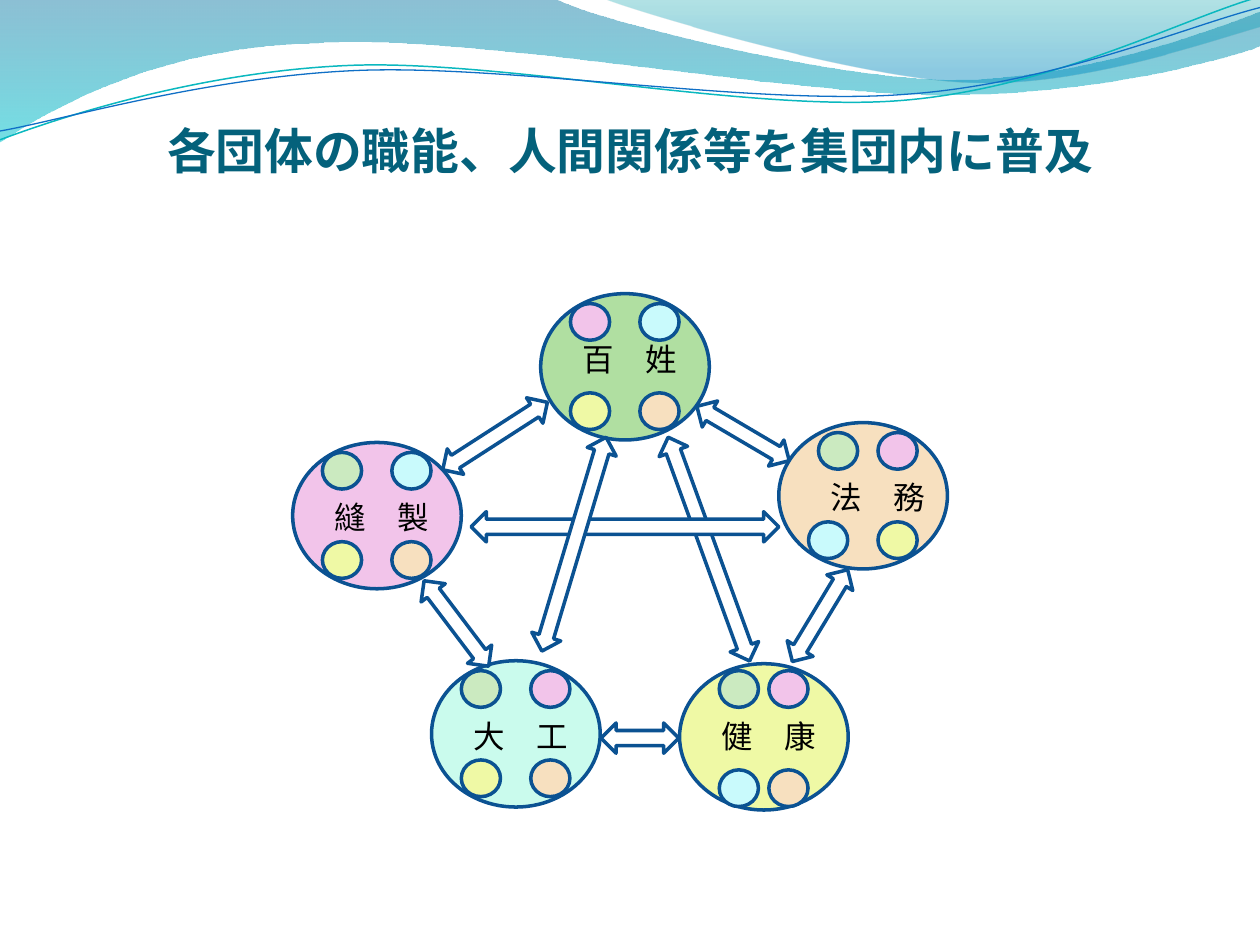
from lxml import etree
from pptx import Presentation
from pptx.dml.color import RGBColor
from pptx.enum import shapes, text
from pptx.oxml.ns import qn
from pptx.util import Cm, Pt

INK = "0B5292"
GREEN, PINK, CYAN, YELLOW, PEACH = "CBEAC0", "F2C4EA", "C9FAFC", "EFF9A5", "F7E0BF"
DOT_W, DOT_H = 0.79, 0.74
ARROW_H = 0.61

# Waves: a start, then cubic segments (three points) or straight ones (one
# point), in tenths of the slide width.
BACK = [(0, 0), [(4.4, -0.01)], [(4.76, 0.17), (6.64, 0.63), (7.58, 0.63)],
        [(8.53, 0.63), (9.58, 0.26), (10, 0.09)], [(10.01, 0.36)],
        [(9.83, 0.44), (8.7, 0.76), (7.46, 0.75)],
        [(6.22, 0.75), (3.82, 0.28), (2.57, 0.34)],
        [(1.29, 0.36), (0.46, 0.83), (-0.01, 1.13)]]
FRONT = [(4.79, -0.01), [(5.09, 0.11), (6.82, 0.62), (7.69, 0.65)],
         [(8.56, 0.69), (9.61, 0.32), (10, 0.21)], [(10, 0)]]
TEAL = [(0, 1.11), [(0.48, 0.93), (1.58, 0.57), (2.77, 0.52)],
        [(3.95, 0.47), (5.93, 0.89), (7.13, 0.8)],
        [(8.33, 0.71), (9.38, 0.15), (9.98, -0.02)]]
BLUE = [(0, 1.04), [(0.47, 0.96), (1.64, 0.61), (2.83, 0.56)],
        [(4.03, 0.51), (5.97, 0.84), (7.17, 0.75)],
        [(8.36, 0.67), (9.41, 0.21), (10, 0.06)]]

# Box, fill, name, name offset, then dots as (x, y, fill) within the box.
TEAMS = [
    ((10.9, 5.92, 3.4, 2.95), "B0DFA1", "百　姓", (0.6, 0.81),
     [(0.6, 0.2, PINK), (2, 0.2, CYAN), (0.6, 2, YELLOW), (2, 2, PEACH)]),
    ((5.9, 8.92, 3.4, 2.95), PINK, "縫　製", (0.6, 1),
     [(0.6, 0.2, GREEN), (2, 0.2, CYAN), (0.6, 2, YELLOW), (2, 2, PEACH)]),
    ((8.7, 13.32, 3.4, 2.95), "CAFBED", "大　工", (0.6, 1),
     [(0.6, 0.2, GREEN), (2, 0.2, PINK), (0.6, 2, YELLOW), (2, 2, PEACH)]),
    ((13.7, 13.38, 3.4, 2.95), YELLOW, "健　康", (0.6, 0.94),
     [(0.8, 0.14, GREEN), (1.8, 0.14, PINK), (0.8, 2.14, CYAN), (1.8, 2.14, PEACH)]),
    ((15.7, 8.52, 3.4, 2.95), PEACH, "法　務", (0.8, 1),
     [(0.8, 0.2, GREEN), (2, 0.2, PINK), (0.6, 2, CYAN), (2, 2, YELLOW)]),
]

# Centre x, centre y, length, angle
ARROWS = [(14.98, 8.74, 2.16, 30.5), (9.2, 12.57, 2.16, 52.9),
          (16.53, 12.41, 2.16, 121.1), (12.9, 14.88, 1.57, 0),
          (9.98, 8.79, 2.51, 147.2), (14.29, 11.07, 4.8, 70),
          (12.6, 10.62, 6.2, 0), (11.57, 10.97, 4.5, 106.7)]


def color(code):
    return RGBColor.from_string(code)


def write(frame, words, size=18, font="Cambria", ink="000000", bold=False,
          align=text.PP_ALIGN.LEFT, anchor=text.MSO_ANCHOR.TOP):
    frame.word_wrap = True
    frame.auto_size = text.MSO_AUTO_SIZE.NONE
    frame.vertical_anchor = anchor
    para = frame.paragraphs[0]
    para.alignment = align
    run = para.add_run()
    run.text = words
    run.font.size = Pt(size)
    run.font.name = font
    run.font.bold = bold
    run.font.color.rgb = color(ink)
    asian = etree.SubElement(run.font._element, qn("a:ea"))
    asian.set("typeface", "Noto Sans CJK JP")


def shape(slide, kind, box, fill):
    item = slide.shapes.add_shape(kind, *map(Cm, box))
    item.shadow.inherit = False
    item.fill.solid()
    item.fill.fore_color.rgb = color(fill)
    item.line.color.rgb = color(INK)
    item.line.width = Pt(2)
    return item


def wave(slide, box, curve, closed):
    """Lay out all points as lines, then bend each three into one cubic."""
    left, top, width = box

    def spot(point):
        return Cm(left + point[0] * width / 10), Cm(top + point[1] * width / 10)

    start, *parts = curve
    pen = slide.shapes.build_freeform(*spot(start))
    pen.add_line_segments([spot(p) for part in parts for p in part], close=closed)
    item = pen.convert_to_shape()
    item.shadow.inherit = False
    lines = iter(list(item._element.iter(qn("a:lnTo"))))
    for part in parts:
        group = [next(lines) for _ in part]
        if len(group) == 3:
            group[0].tag = qn("a:cubicBezTo")
            for line in group[1:]:
                group[0].append(line[0])
                line.getparent().remove(line)
    return item


def band(slide, box, curve, stops):
    """Draw a wave filled from top to bottom; stops are (place, colour, alpha)."""
    item = wave(slide, box, curve, True)
    item.line.fill.background()
    item.fill.gradient()
    item.fill.gradient_angle = 270
    for stop, (place, code, alpha) in zip(item.fill.gradient_stops, stops):
        stop.position = place
        stop.color.rgb = color(code)
    tints = list(item._element.iter(qn("a:srgbClr")))
    for tint, (place, code, alpha) in zip(tints, stops):
        etree.SubElement(tint, qn("a:alpha")).set("val", str(alpha * 1000))


def strand(slide, box, curve, code, width):
    item = wave(slide, box, curve, False)
    item.fill.background()
    item.line.color.rgb = color(code)
    item.line.width = Pt(width)


def header(slide, box):
    band(slide, box, BACK, [(0, "0074A1", 45), (1, "00C6CF", 55)])
    band(slide, box, FRONT, [(0, "00A1A9", 30), (0.8, "008BBF", 45)])
    strand(slide, box, TEAL, "0AB8BF", 0.85)
    strand(slide, box, BLUE, "0F6FC6", 0.75)


def title(slide, box):
    item = slide.shapes.title
    item.left, item.top, item.width, item.height = map(Cm, box)
    frame = item.text_frame
    frame.margin_left = frame.margin_right = frame.margin_bottom = 0
    write(frame, "各団体の職能、人間関係等を集団内に普及", size=27.9,
          font="Noto Sans CJK JP", ink="04617B", bold=True,
          align=text.PP_ALIGN.CENTER, anchor=text.MSO_ANCHOR.BOTTOM)


def team(slide, box, fill, name, shift, dots):
    left, top = box[:2]
    oval = shapes.MSO_SHAPE.OVAL
    shape(slide, oval, box, fill)
    label = slide.shapes.add_textbox(Cm(left + shift[0]), Cm(top + shift[1]),
                                     Cm(2.8), Cm(1.02))
    write(label.text_frame, name)
    for x, y, code in dots:
        shape(slide, oval, (left + x, top + y, DOT_W, DOT_H), code)


def arrow(slide, x, y, length, angle):
    box = (x - length / 2, y - ARROW_H / 2, length, ARROW_H)
    item = shape(slide, shapes.MSO_SHAPE.LEFT_RIGHT_ARROW, box, "FFFFFF")
    item.rotation = angle


def main():
    deck = Presentation()
    deck.slide_width, deck.slide_height = Cm(25.4), Cm(19.05)
    slide = deck.slides.add_slide(deck.slide_layouts.get_by_name("Title Only"))
    header(slide, (0, 0, 25.4))
    title(slide, (1.27, 1.84, 22.86, 1.78))
    for row in TEAMS:
        team(slide, *row)
    for row in ARROWS:
        arrow(slide, *row)
    deck.save("out.pptx")


if __name__ == "__main__":
    main()
